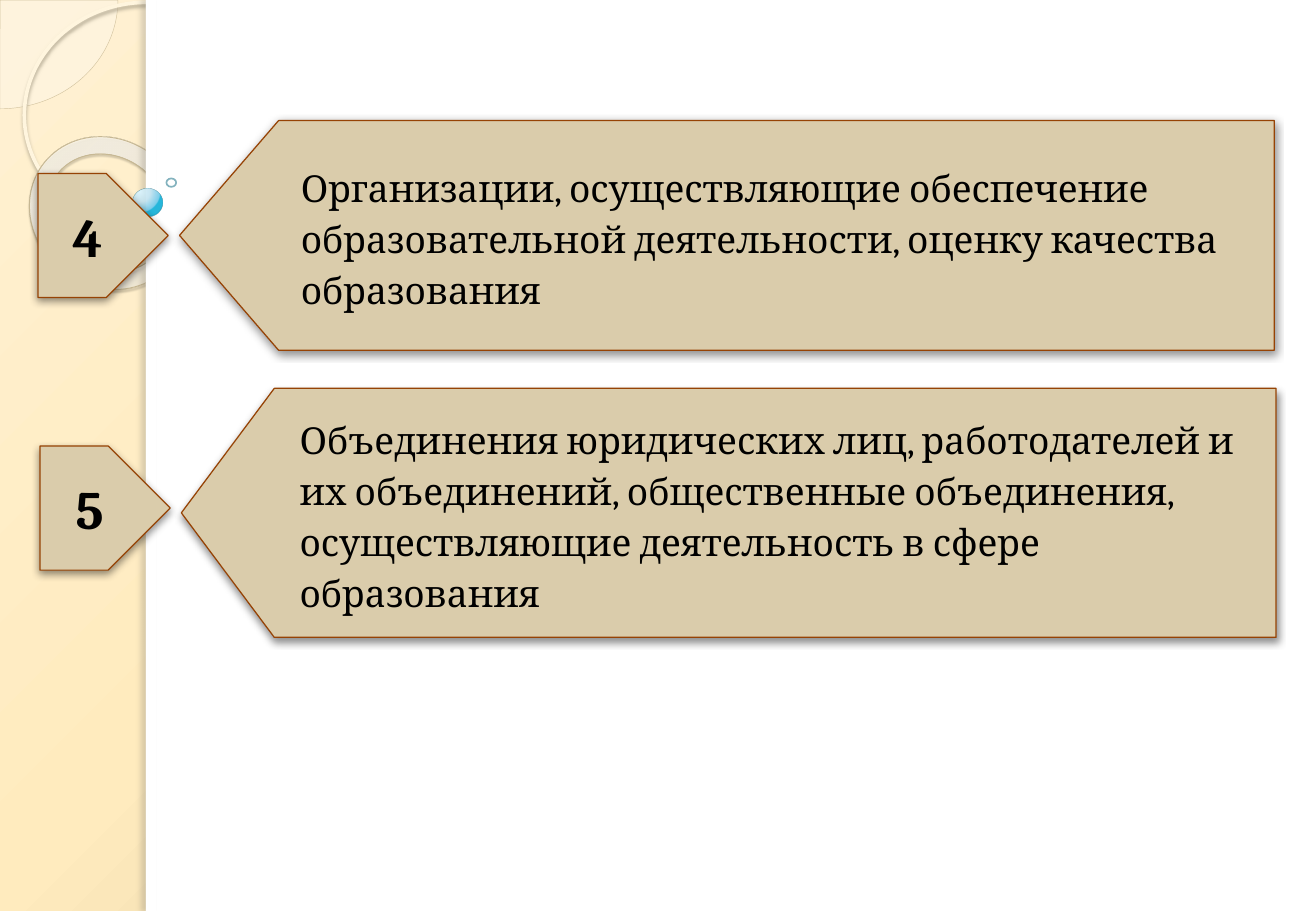
from dataclasses import dataclass

from pptx import Presentation
from pptx import oxml
from pptx.dml.color import RGBColor
from pptx.enum import shapes, text
from pptx.oxml import ns
from pptx.util import Pt

PRESET = shapes.MSO_SHAPE


@dataclass(frozen=True)
class Theme:
    font: str = "Cambria"
    number_size: int = 32
    body_size: int = 22
    ink: str = "000000"
    paper: str = "FFFFFF"
    panel: str = "DACCAB"
    panel_line: tuple = ("964305", 0.75)
    panel_shadow: tuple = ("000000", 43, 5, 2, 90)
    backdrop: tuple = (("FFF1D3", 0, 100), ("FFEBBE", 40, 100), ("C9B484", 100, 100))
    backdrop_focus: tuple = (-24, -20)
    wedge: str = "FEFAF4"
    wedge_line: tuple = ("D3C39F", 0.25)
    circle_line: tuple = ("FFF5DE", 2.15)
    circle_shadow: tuple = ("B0A68F", 85, 2, 2, 90)
    ring: tuple = (("FFFCF6", 0, 70), ("FFFEFB", 70, 55), ("F0D28E", 100, 60))
    ring_focus: tuple = (-408, -50)
    ring_line: tuple = ("C7B893", 0.58)
    ring_shadow: tuple = ("5A5444", 35, 1, 1.2, 75)
    edge_shadow: tuple = ("736F63", 25, 3, 3, 180)
    bubble: tuple = (("DAF4FF", 0, 95), ("C3E3F0", 50, 90), ("6BC7E8", 95, 88), ("00ABD5", 100, 85))
    bubble_focus: tuple = (25, 12)
    bubble_line: tuple = ("308EA5", 0.16, 60)
    small_bubble_line: tuple = ("318093", 1, 60)


THEME = Theme()


def set_attributes(target, values):
    for name, value in values.items():
        setattr(target, name, value)


def element(tag, content="", attributes=""):
    return oxml.parse_xml(f'<a:{tag} {ns.nsdecls("a")} {attributes}>{content}</a:{tag}>')


def color_xml(color, opacity=100):
    return f'<a:srgbClr val="{color}"><a:alpha val="{opacity * 1000}"/></a:srgbClr>'


def solid(color, opacity=100):
    return element("solidFill", color_xml(color, opacity))


def radial(stops, focus):
    x, y = (value * 1000 for value in focus)
    stop_list = "".join(
        f'<a:gs pos="{position * 1000}">{color_xml(color, opacity)}</a:gs>'
        for color, position, opacity in stops
    )
    center = f'<a:fillToRect l="{x}" t="{y}" r="{100000 - x}" b="{100000 - y}"/>'
    return element("gradFill", f'<a:gsLst>{stop_list}</a:gsLst><a:path path="circle">{center}</a:path>')


def outline(color, width, opacity=100):
    line = element("ln", attributes=f'w="{Pt(width)}"')
    line.append(solid(color, opacity))
    return line


def effects(shadow):
    if shadow is None:
        return element("effectLst")
    color, opacity, blur, distance, angle = shadow
    return element(
        "effectLst",
        f'<a:outerShdw blurRad="{Pt(blur)}" dist="{Pt(distance)}" dir="{angle * 60000}" '
        f'algn="tl" rotWithShape="0">{color_xml(color, opacity)}</a:outerShdw>',
    )


def set_backdrop(slide):
    slide.background.fill.solid()
    properties = slide.element.find(".//" + ns.qn("p:bgPr"))
    properties.replace(properties[0], radial(THEME.backdrop, THEME.backdrop_focus))


def add_figure(slide, preset, box, fill=None, line=None, shadow=None, adjustments=(), rotation=0):
    shape = slide.shapes.add_shape(preset, *(Pt(value) for value in box))
    shape.rotation = rotation
    for index, value in enumerate(adjustments):
        shape.adjustments[index] = value
    properties = shape.element.spPr
    properties.append(element("noFill") if fill is None else fill)
    properties.append(element("ln", "<a:noFill/>") if line is None else outline(*line))
    properties.append(effects(shadow))
    return shape


def add_panel(slide, box, adjustments=()):
    return add_figure(slide, PRESET.PENTAGON, box, solid(THEME.panel), THEME.panel_line,
                      THEME.panel_shadow, adjustments)


def write(shape, wording, paragraph_format, font_format):
    set_attributes(shape.text_frame, {"word_wrap": True, "vertical_anchor": text.MSO_ANCHOR.MIDDLE})
    paragraph = shape.text_frame.paragraphs[0]
    set_attributes(paragraph, paragraph_format)
    run = paragraph.add_run()
    run.text = wording
    set_attributes(run.font, {"name": THEME.font, **font_format})
    run.font.color.rgb = RGBColor.from_string(THEME.ink)
    return paragraph, run


def add_number(slide, number, box):
    shape = add_panel(slide, box)
    paragraph, run = write(shape, number, {"alignment": text.PP_ALIGN.CENTER},
                           {"size": Pt(THEME.number_size), "bold": True})
    run.font._element.insert(0, outline(THEME.paper, 1))


def add_statement(slide, wording, box, point):
    shape = add_panel(slide, box, [point])
    shape.element.spPr.find(ns.qn("a:xfrm")).set("flipH", "1")
    paragraph, run = write(shape, wording,
                           {"alignment": text.PP_ALIGN.LEFT, "line_spacing": 1.15},
                           {"size": Pt(THEME.body_size)})
    properties = paragraph._p.get_or_add_pPr()
    properties.set("marL", str(Pt(35.4)))
    properties.set("indent", "0")


def add_decoration(slide):
    add_figure(slide, PRESET.PIE, (-69.8, -64.4, 139.7, 128.9), solid(THEME.wedge, 33),
               THEME.wedge_line, adjustments=(0, 54.02))
    add_figure(slide, PRESET.OVAL, (14.4, 1.4, 145.4, 133.9), line=THEME.circle_line,
               shadow=THEME.circle_shadow)
    add_figure(slide, PRESET.DONUT, (15.8, 82.8, 95.8, 87.1), radial(THEME.ring, THEME.ring_focus),
               THEME.ring_line, THEME.ring_shadow, (0.118,), 38.6)
    add_figure(slide, PRESET.RECTANGLE, (86.4, 0, 693.4, 540), solid(THEME.paper))
    add_figure(slide, PRESET.RECTANGLE, (86.4, 0, 6.5, 540), solid(THEME.paper),
               shadow=THEME.edge_shadow)
    add_figure(slide, PRESET.OVAL, (78.5, 111.6, 18, 16.6),
               radial(THEME.bubble, THEME.bubble_focus), THEME.bubble_line)
    add_figure(slide, PRESET.OVAL, (98.6, 105.8, 5.8, 5), line=THEME.small_bubble_line)


def main():
    presentation = Presentation()
    set_attributes(presentation, {"slide_width": Pt(779.8), "slide_height": Pt(540)})
    slide = presentation.slides.add_slide(presentation.slide_layouts[6])
    set_backdrop(slide)
    add_decoration(slide)
    add_number(slide, "4", (22.5, 102.8, 77.2, 73.6))
    add_statement(slide, "Организации, осуществляющие обеспечение образовательной деятельности, "
                  "оценку качества образования", (106.4, 71.5, 648.7, 136.1), 0.431)
    add_statement(slide, "Объединения юридических лиц, работодателей и их объединений, "
                  "общественные объединения, осуществляющие деятельность в сфере образования",
                  (107.5, 230.2, 648.7, 147.6), 0.373)
    add_number(slide, "5", (23.7, 264.4, 77.2, 73.6))
    presentation.save("out.pptx")


if __name__ == "__main__":
    main()
